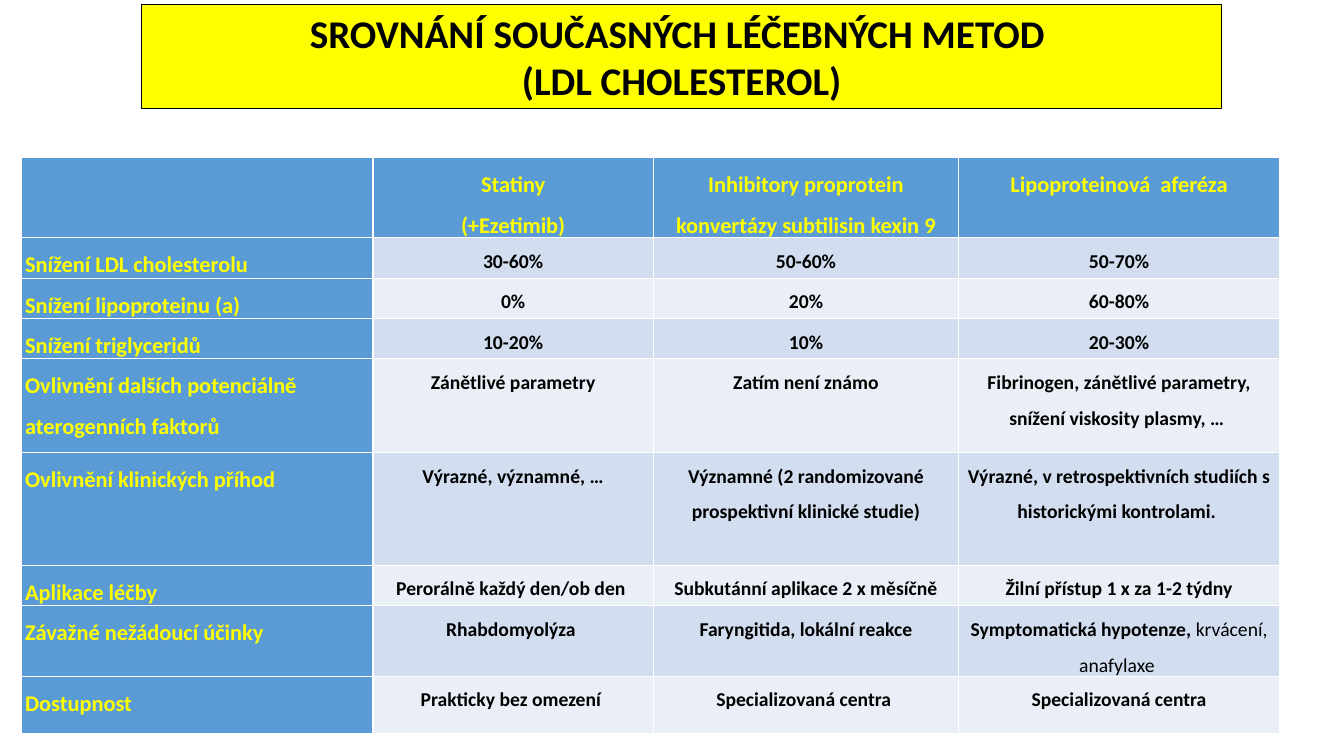
import pptx
import pptx.util
import pptx.dml.color
import pptx.enum.text

Inches, Pt = pptx.util.Inches, pptx.util.Pt
CENTER = pptx.enum.text.PP_ALIGN.CENTER
LEFT = pptx.enum.text.PP_ALIGN.LEFT

# Content: a tuple in a cell is bold text followed by regular text
HEADING = "SROVNÁNÍ SOUČASNÝCH LÉČEBNÝCH METOD \n(LDL CHOLESTEROL)"
COMPARISON = [
    ["", "Statiny\n(+Ezetimib)",
     "Inhibitory proprotein konvertázy subtilisin kexin 9", "Lipoproteinová  aferéza"],
    ["Snížení LDL cholesterolu", "30-60%", "50-60%", "50-70%"],
    ["Snížení lipoproteinu (a)", "0%", "20%", "60-80%"],
    ["Snížení triglyceridů", "10-20%", "10%", "20-30%"],
    ["Ovlivnění dalších potenciálně aterogenních faktorů", "Zánětlivé parametry",
     "Zatím není známo", "Fibrinogen, zánětlivé parametry, snížení viskosity plasmy, … "],
    ["Ovlivnění klinických příhod", "Výrazné, významné, …",
     "Významné (2 randomizované prospektivní klinické studie)",
     "Výrazné, v retrospektivních studiích s historickými kontrolami. "],
    ["Aplikace léčby", "Perorálně každý den/ob den ",
     "Subkutánní aplikace 2 x měsíčně", "Žilní přístup 1 x za 1-2 týdny"],
    ["Závažné nežádoucí účinky", "Rhabdomyolýza ", "Faryngitida, lokální reakce",
     ("Symptomatická hypotenze, ", "krvácení, anafylaxe ")],
    ["Dostupnost", "Prakticky bez omezení ", "Specializovaná centra ",
     "Specializovaná centra"],
]
COLUMN_WIDTHS = [3.49, 2.78, 3.03, 3.18]
ROW_HEIGHTS = [0.68, 0.31, 0.31, 0.31, 0.93, 1.12, 0.4, 0.67, 0.57]
BLUE, YELLOW, BLACK = "5B9BD5", "FFFF00", "000000"
BANDS = ["EAEFF7", "D2DEEF"]


def color(value):
    return pptx.dml.color.RGBColor.from_string(value)


def paint(target, value):
    target.fill.solid()
    target.fill.fore_color.rgb = color(value)


def style_text(frame, size, ink, align, spacing):
    for paragraph in frame.paragraphs:
        paragraph.alignment = align
        paragraph.line_spacing = spacing
        for position, run in enumerate(paragraph.runs):
            run.font.name = "Calibri"
            run.font.size = Pt(size)
            run.font.bold = position == 0
            run.font.color.rgb = color(ink)


deck = pptx.Presentation()
deck.slide_width, deck.slide_height = Inches(13.33), Inches(7.5)
slide = deck.slides.add_slide(deck.slide_layouts[5])

# Heading banner
heading = slide.shapes.title
heading.left, heading.top = Inches(1.4), Inches(0.04)
heading.width, heading.height = Inches(10.72), Inches(1.04)
paint(heading, YELLOW)
heading.line.color.rgb = color(BLACK)
heading.line.width = Pt(0.75)
heading.text_frame.text = HEADING
heading.text_frame.auto_size = pptx.enum.text.MSO_AUTO_SIZE.SHAPE_TO_FIT_TEXT
heading.text_frame.vertical_anchor = pptx.enum.text.MSO_ANCHOR.MIDDLE
style_text(heading.text_frame, 28, BLACK, CENTER, 1.0)

# Comparison table
comparison = slide.shapes.add_table(
    len(ROW_HEIGHTS), len(COLUMN_WIDTHS), Inches(0.21), Inches(1.56),
    Inches(sum(COLUMN_WIDTHS)), Inches(sum(ROW_HEIGHTS))).table
comparison.first_col = True
for column, width in zip(comparison.columns, COLUMN_WIDTHS):
    column.width = Inches(width)
for row, height in zip(comparison.rows, ROW_HEIGHTS):
    row.height = Inches(height)

for r, entries in enumerate(COMPARISON):
    for c, entry in enumerate(entries):
        cell = comparison.cell(r, c)
        cell.margin_left = cell.margin_right = Inches(0.04)
        cell.margin_top = cell.margin_bottom = 0
        is_label = r == 0 or c == 0
        paint(cell, BLUE if is_label else BANDS[r % 2])
        strong, regular = entry if isinstance(entry, tuple) else (entry, "")
        cell.text_frame.text = strong
        if regular:
            cell.text_frame.paragraphs[0].add_run().text = regular
        style_text(cell.text_frame, 16 if is_label else 14,
                   YELLOW if is_label else BLACK, CENTER if c else LEFT, 1.5)

deck.save("out.pptx")
